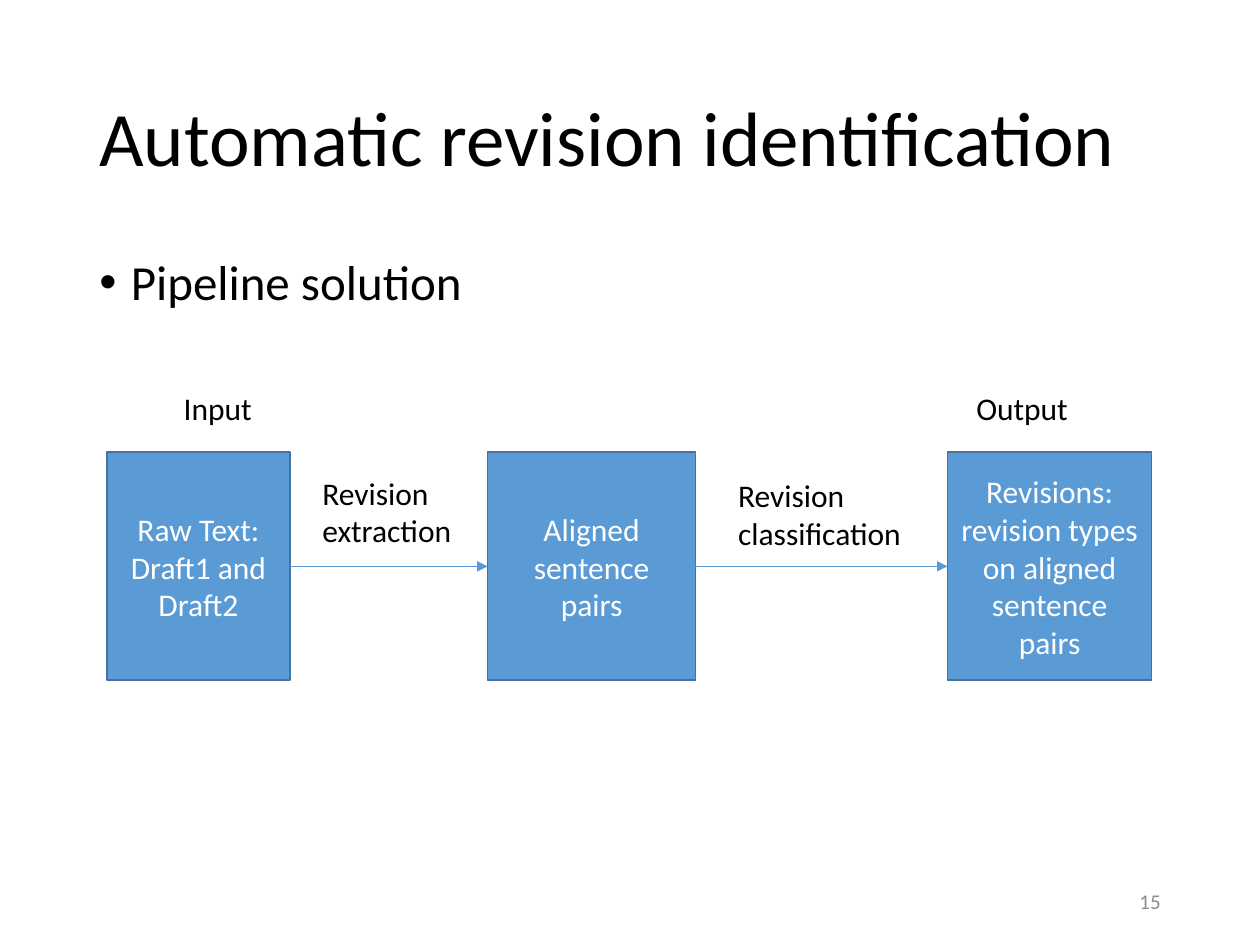
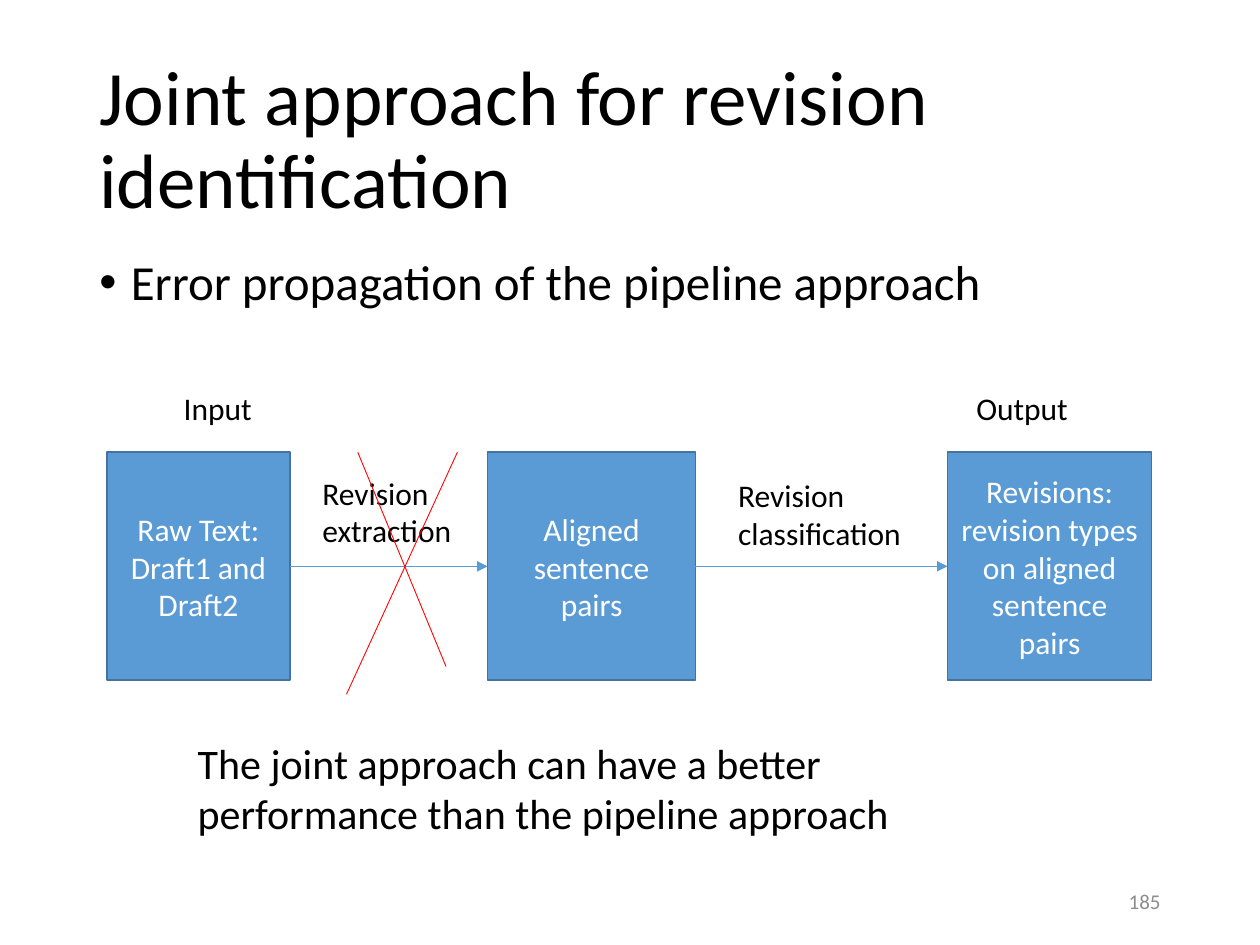
from lxml import etree
from pptx import Presentation
from pptx.dml.color import RGBColor
from pptx.enum.shapes import MSO_CONNECTOR, MSO_SHAPE
from pptx.enum.text import MSO_ANCHOR, PP_ALIGN
from pptx.oxml.ns import qn
from pptx.util import Inches, Pt

RECT = MSO_SHAPE.RECTANGLE
STRAIGHT = MSO_CONNECTOR.STRAIGHT
TOP, MIDDLE = MSO_ANCHOR.TOP, MSO_ANCHOR.MIDDLE
LEFT, CENTER, RIGHT = PP_ALIGN.LEFT, PP_ALIGN.CENTER, PP_ALIGN.RIGHT

FONT = "Calibri"
COLORS = {
    "text": "000000",
    "number": "8C8C8C",
    "box": "5B9BD5",
    "box_line": "43739E",
    "box_text": "FFFFFF",
    "cross": "FF0000",
}
MARGIN, CONTENT_WIDTH = 0.69, 8.62
BOX_TOP, BOX_HEIGHT = 3.59, 1.81
LABEL_TOP = 3.04
RIGHT_SITE, LEFT_SITE = 3, 1

STAGES = [
    ("Raw Text: Draft1 and Draft2", 0.85, 1.45),
    ("Aligned sentence pairs", 3.87, 1.65),
    ("Revisions: revision types on aligned sentence pairs", 7.52, 1.62),
]
LABELS = [
    ("Input", 1.36, LABEL_TOP, 0.94, 0.41),
    ("Output", 7.65, LABEL_TOP, 0.94, 0.41),
    ("Revision extraction", 2.46, 3.71, 1.52, 0.71),
    ("Revision classification", 5.76, 3.73, 1.52, 0.71),
]


def rgb(name):
    return RGBColor.from_string(COLORS[name])


def write(sp, text, size=18, color="text", align=LEFT, anchor=TOP,
          spacing=1.0, bullet=False):
    tf = sp.text_frame
    tf.word_wrap = True
    tf.vertical_anchor = anchor
    p = tf.paragraphs[0]
    if bullet:
        pPr = p._p.get_or_add_pPr()
        pPr.set("marL", str(Inches(0.25)))
        pPr.set("indent", str(Inches(-0.25)))
        etree.SubElement(pPr, qn("a:buFont"), typeface="Arial")
        etree.SubElement(pPr, qn("a:buChar"), char="•")
    p.alignment = align
    p.line_spacing = spacing
    r = p.add_run()
    r.text = text
    r.font.name = FONT
    r.font.size = Pt(size)
    r.font.color.rgb = rgb(color)


def add_text(s, text, x, y, w, h, **style):
    sp = s.shapes.add_textbox(Inches(x), Inches(y), Inches(w), Inches(h))
    write(sp, text, **style)


def add_box(s, text, x, w):
    sp = s.shapes.add_shape(RECT, Inches(x), Inches(BOX_TOP),
                            Inches(w), Inches(BOX_HEIGHT))
    sp.shadow.inherit = False
    sp.fill.solid()
    sp.fill.fore_color.rgb = rgb("box")
    sp.line.color.rgb = rgb("box_line")
    sp.line.width = Pt(1)
    write(sp, text, color="box_text", align=CENTER, anchor=MIDDLE)
    return sp


def add_line(s, color, x1=0, y1=0, x2=0, y2=0):
    line = s.shapes.add_connector(STRAIGHT, Inches(x1), Inches(y1),
                                  Inches(x2), Inches(y2))
    line.line.color.rgb = rgb(color)
    line.line.width = Pt(0.5)
    etree.SubElement(line._element.spPr, qn("a:effectLst"))
    return line


def add_arrow(s, source, target):
    arrow = add_line(s, "box")
    arrow.begin_connect(source, RIGHT_SITE)
    arrow.end_connect(target, LEFT_SITE)
    ln = arrow.line._get_or_add_ln()
    etree.SubElement(ln, qn("a:tailEnd"), type="triangle")


def add_pipeline(s):
    boxes = [add_box(s, *stage) for stage in STAGES]
    for source, target in zip(boxes, boxes[1:]):
        add_arrow(s, source, target)
    for label in LABELS:
        add_text(s, *label)


def add_slide(prs, title, point, number):
    s = prs.slides.add_slide(prs.slide_layouts[6])
    add_text(s, title, MARGIN, 0.4, CONTENT_WIDTH, 1.45,
             size=44, anchor=MIDDLE, spacing=0.9)
    add_text(s, point, MARGIN, 2, CONTENT_WIDTH, 4.76,
             size=28, spacing=0.9, bullet=True)
    add_text(s, number, 7.06, 6.95, 2.25, 0.4,
             size=12, color="number", align=RIGHT, anchor=MIDDLE)
    add_pipeline(s)
    return s


def main():
    prs = Presentation()
    prs.slide_width, prs.slide_height = Inches(10), Inches(7.5)

    add_slide(prs, "Automatic revision identification",
              "Pipeline solution", "15")

    s = add_slide(prs, "Joint approach for revision identification",
                  "Error propagation of the pipeline approach", "185")
    add_line(s, "cross", 3.63, BOX_TOP, 2.75, 5.51)
    add_line(s, "cross", 2.84, BOX_TOP, 3.54, 5.29)
    add_text(s, "The joint approach can have a better performance "
             "than the pipeline approach", 1.47, 5.8, 6.65, 1.21, size=24)

    prs.save("out.pptx")


if __name__ == "__main__":
    main()
